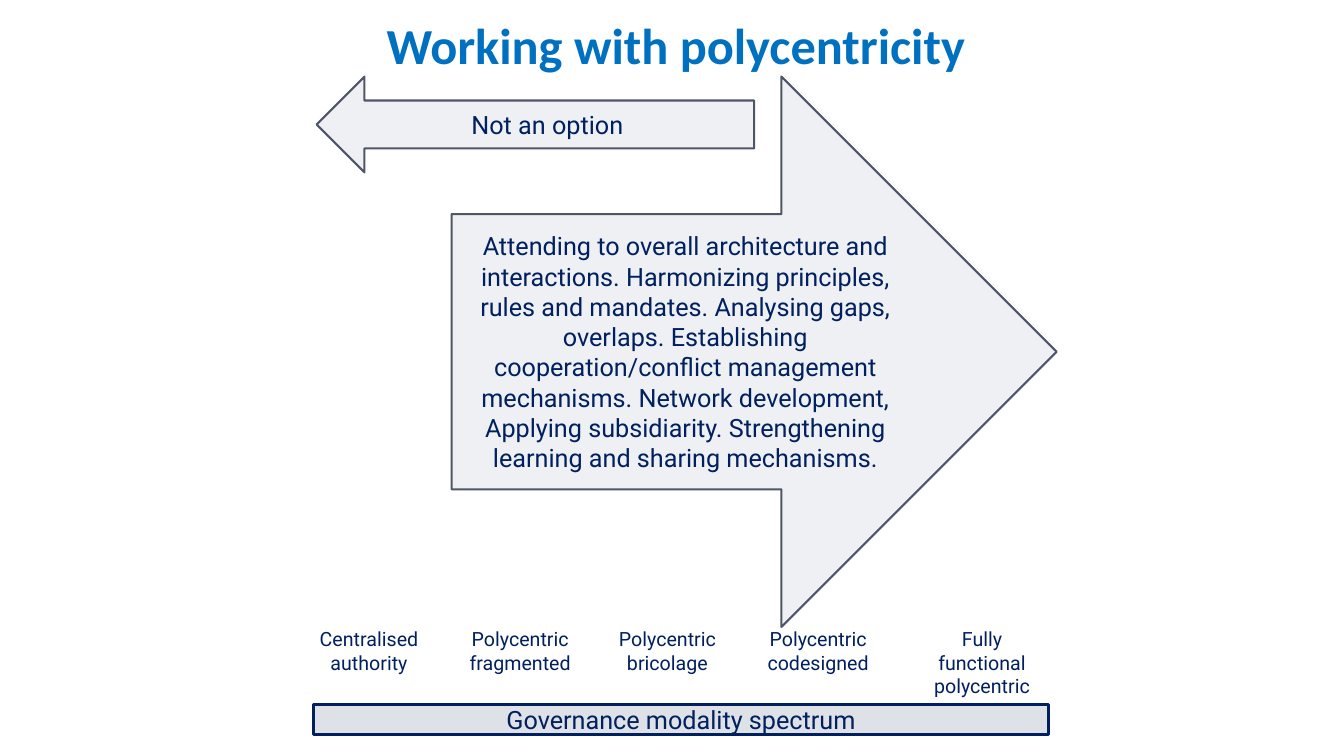
import pptx
import pptx.util
import pptx.dml.color
import pptx.enum.shapes
import pptx.enum.text

Inches = pptx.util.Inches
Shape = pptx.enum.shapes.MSO_SHAPE
Anchor = pptx.enum.text.MSO_ANCHOR
NAVY = "002060"
ARROW_STYLE = {"fill": "EEF0F3", "line": "4E5768", "weight": 1.5, "inset": 0.04}
BAR_STYLE = {"fill": "DEE1E6", "line": NAVY, "weight": 2, "inset": 0.1}
STAGES = [
    ("Centralised authority", 2.92, 1.48, 0.57),
    ("Polycentric fragmented", 4.48, 1.36, 0.57),
    ("Polycentric bricolage", 6.03, 1.18, 0.57),
    ("Polycentric codesigned", 7.48, 1.27, 0.57),
    ("Fully functional polycentric", 9, 1.48, 0.81),
]
ACTIONS = (
    "Attending to overall architecture and interactions. "
    "Harmonizing principles, rules and mandates. Analysing gaps, overlaps. "
    "Establishing cooperation/conflict management mechanisms. "
    "Network development, Applying subsidiarity. "
    "Strengthening learning and sharing mechanisms."
)


def colour(value):
    """Return the colour for a hex string."""
    return pptx.dml.color.RGBColor.from_string(value)


def write(box, text, size, anchor, font="Roboto", ink=NAVY, bold=False):
    """Fill a box with one centred, wrapped paragraph."""
    frame = box.text_frame
    frame.text = text
    frame.word_wrap = True
    frame.auto_size = pptx.enum.text.MSO_AUTO_SIZE.NONE
    frame.vertical_anchor = anchor
    para = frame.paragraphs[0]
    para.alignment = pptx.enum.text.PP_ALIGN.CENTER
    span = para.runs[0]
    span.font.name = font
    span.font.size = pptx.util.Pt(size)
    span.font.bold = bold
    span.font.color.rgb = colour(ink)


def add_title(page, left, top, width, height):
    """Place the heading in the title placeholder."""
    title = page.shapes.title
    title.left, title.top = Inches(left), Inches(top)
    title.width, title.height = Inches(width), Inches(height)
    write(title, "Working with polycentricity", 36, Anchor.TOP,
          "Calibri", "0070C0", True)


def add_block(page, kind, text, area, style):
    """Draw an outlined shape with a centred caption."""
    block = page.shapes.add_shape(kind, *map(Inches, area))
    block.shadow.inherit = False
    block.fill.solid()
    block.fill.fore_color.rgb = colour(style["fill"])
    block.line.color.rgb = colour(style["line"])
    block.line.width = pptx.util.Pt(style["weight"])
    write(block, text, 18, Anchor.MIDDLE)
    block.text_frame.margin_left = Inches(style["inset"])
    block.text_frame.margin_right = Inches(style["inset"])


def add_arrows(page, left, top, right):
    """Draw the two opposing arrows between the given edges."""
    add_block(page, Shape.RIGHT_ARROW, ACTIONS,
              (right - 6, top, 6, 5.46), ARROW_STYLE)
    add_block(page, Shape.LEFT_ARROW, "Not an option",
              (left, top, 4.34, 0.95), ARROW_STYLE)


def add_spectrum(page, left, top, width):
    """Place the stage labels above the spectrum bar."""
    for text, label_left, label_width, label_height in STAGES:
        area = (label_left, top, label_width, label_height)
        label = page.shapes.add_textbox(*map(Inches, area))
        write(label, text, 14, Anchor.TOP)
    add_block(page, Shape.RECTANGLE, "Governance modality spectrum",
              (left, top + 0.82, width, 0.3), BAR_STYLE)


def main():
    """Build and save the deck."""
    deck = pptx.Presentation()
    deck.slide_width, deck.slide_height = Inches(13.33), Inches(7.5)
    page = deck.slides.add_slide(deck.slide_layouts[5])
    add_title(page, 1.67, 0.09, 10.07, 0.86)
    add_spectrum(page, 3.11, 6.17, 7.29)
    add_arrows(page, 3.14, 0.76, 10.48)
    deck.save("out.pptx")


if __name__ == "__main__":
    main()
